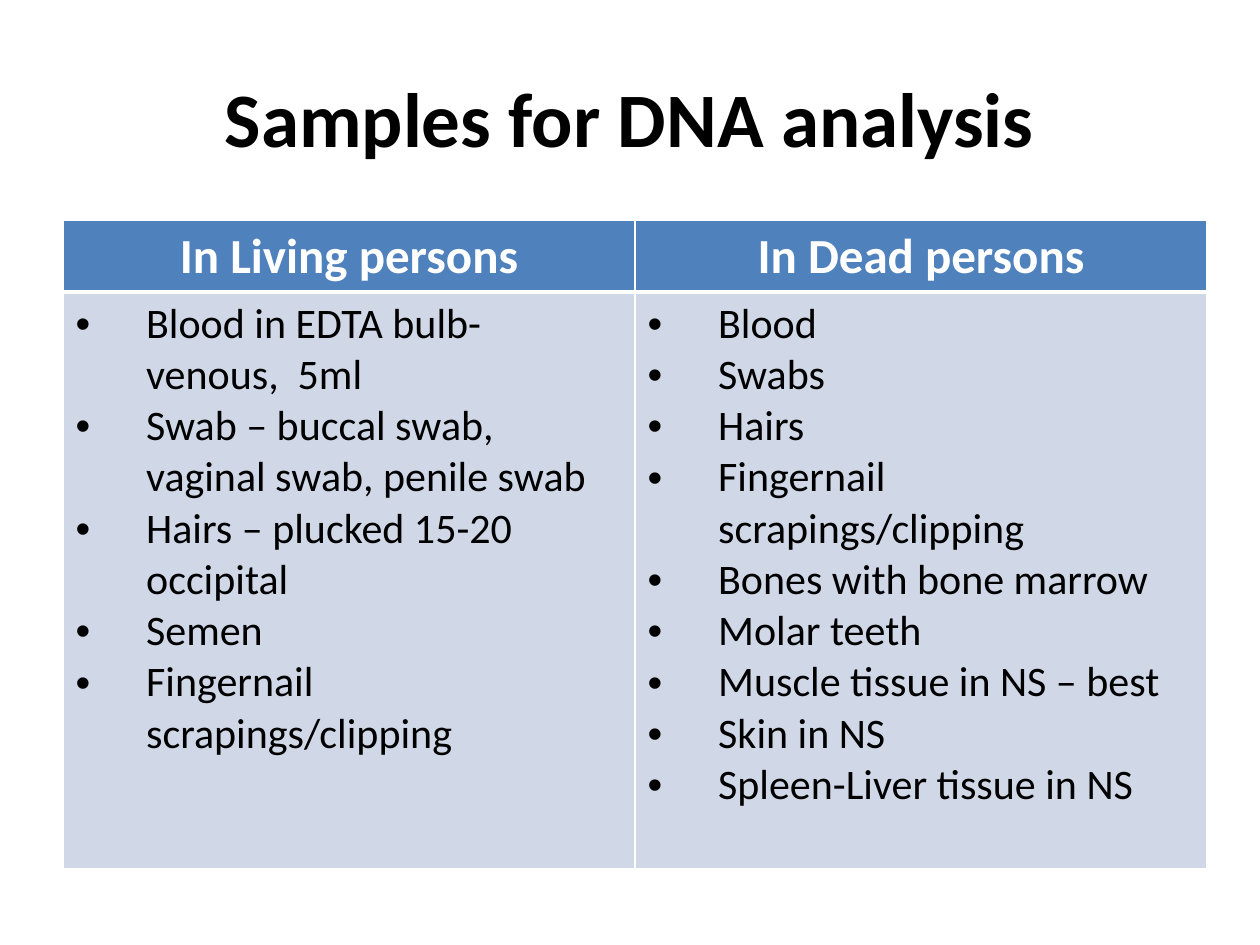
from lxml.etree import SubElement
from pptx import Presentation
from pptx.dml.color import RGBColor
from pptx.enum.text import MSO_ANCHOR, PP_ALIGN
from pptx.oxml.ns import qn
from pptx.util import Emu, Inches, Pt

COLOURS = {"text": "000000", "light": "FFFFFF", "header": "4F81BD", "body": "D0D8E8"}
FONT = "Calibri"
INDENT = Inches(0.56)
HEADER_SHARE = 0.11
SAMPLES = {
    "In Living persons": [
        "Blood in EDTA bulb- venous,  5ml",
        "Swab – buccal swab, vaginal swab, penile swab",
        "Hairs – plucked 15-20 occipital",
        "Semen",
        "Fingernail scrapings/clipping",
    ],
    "In Dead persons": [
        "Blood",
        "Swabs",
        "Hairs",
        "Fingernail scrapings/clipping",
        "Bones with bone marrow",
        "Molar teeth",
        "Muscle tissue in NS – best",
        "Skin in NS",
        "Spleen-Liver tissue in NS",
    ],
}


def colour(name):
    return RGBColor.from_string(COLOURS[name])


def add_span(para, text, size, colour_name, bold=False):
    span = para.add_run()
    span.text = text
    span.font.name = FONT
    span.font.size = Pt(size)
    span.font.bold = bold
    span.font.color.rgb = colour(colour_name)


def add_bullet(para):
    properties = para._p.get_or_add_pPr()
    properties.set("marL", str(INDENT))
    properties.set("indent", str(-INDENT))
    SubElement(properties, qn("a:buFont"), typeface="Arial")
    SubElement(properties, qn("a:buChar"), char="•")


def style_cell(cell, fill_name, top, bottom):
    """Give the cell white borders, in points, and a plain fill."""
    properties = cell._tc.get_or_add_tcPr()
    for side, width in {"L": 1, "R": 1, "T": top, "B": bottom}.items():
        line = SubElement(properties, qn(f"a:ln{side}"), w=str(Pt(width)))
        fill = SubElement(line, qn("a:solidFill"))
        SubElement(fill, qn("a:srgbClr"), val=COLOURS["light"])
    cell.fill.solid()
    cell.fill.fore_color.rgb = colour(fill_name)


def add_title(page, area, text):
    box = page.shapes.add_textbox(*area)
    frame = box.text_frame
    frame.word_wrap = True
    frame.vertical_anchor = MSO_ANCHOR.MIDDLE
    para = frame.paragraphs[0]
    para.alignment = PP_ALIGN.CENTER
    add_span(para, text, 44, "text", bold=True)


def add_sample_table(page, area, samples):
    table = page.shapes.add_table(2, len(samples), *area).table
    width, height = area[2:]
    table.rows[0].height = Emu(int(height * HEADER_SHARE))
    table.rows[1].height = height - table.rows[0].height
    for index, (heading, items) in enumerate(samples.items()):
        table.columns[index].width = Emu(width // len(samples))
        header, body = table.cell(0, index), table.cell(1, index)
        style_cell(header, "header", top=1, bottom=3)
        style_cell(body, "body", top=3, bottom=1)
        para = header.text_frame.paragraphs[0]
        para.alignment = PP_ALIGN.CENTER
        add_span(para, heading, 28, "light", bold=True)
        frame = body.text_frame
        for number, item in enumerate(items):
            para = frame.add_paragraph() if number else frame.paragraphs[0]
            add_bullet(para)
            add_span(para, item, 24, "text")


def main():
    deck = Presentation()
    deck.slide_width, deck.slide_height = Inches(10), Inches(7.5)
    page = deck.slides.add_slide(deck.slide_layouts[6])

    def area(left, top, width, height):
        """Turn percentages of the slide's size into lengths."""
        across, down = deck.slide_width / 100, deck.slide_height / 100
        return (Emu(int(left * across)), Emu(int(top * down)),
                Emu(int(width * across)), Emu(int(height * down)))

    add_title(page, area(5, 4, 90, 16.67), "Samples for DNA analysis")
    add_sample_table(page, area(5, 23.33, 90.8, 68.53), SAMPLES)
    deck.save("out.pptx")


if __name__ == "__main__":
    main()
